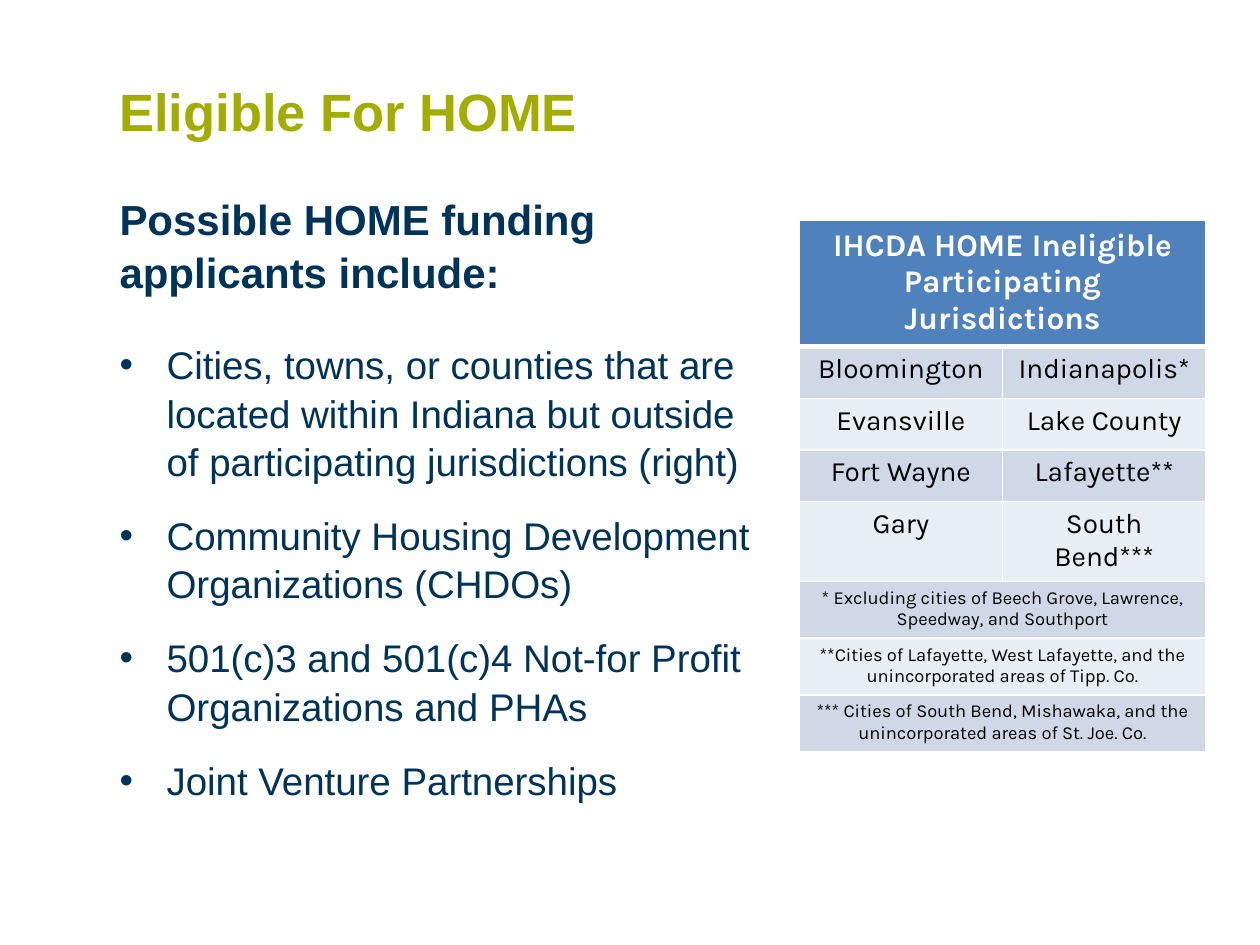
from lxml import etree
from pptx import Presentation
from pptx import util as u
from pptx.dml import color
from pptx.enum import text
from pptx.oxml import ns

NAVY, OLIVE, WHITE, BLACK = "003359", "A2AD00", "FFFFFF", "000000"
HEADER_BLUE, BANDS = "4F81BD", ("D0D8E8", "E9EDF4")

APPLICANTS = [
    "Cities, towns, or counties that are located within Indiana but outside "
    "of participating jurisdictions (right)",
    "Community Housing Development Organizations (CHDOs)",
    "501(c)3 and 501(c)4 Not-for Profit Organizations and PHAs",
    "Joint Venture Partnerships",
]
JURISDICTIONS = [
    ("Bloomington", "Indianapolis*"),
    ("Evansville", "Lake County"),
    ("Fort Wayne", "Lafayette**"),
    ("Gary", "South Bend***"),
]
EXCLUSIONS = [
    "* Excluding cities of Beech Grove, Lawrence, Speedway, and Southport",
    "**Cities of Lafayette, West Lafayette, and the unincorporated areas of Tipp. Co.",
    "*** Cities of South Bend, Mishawaka, and the unincorporated areas of St. Joe. Co.",
]


def rgb(value):
    """Turn a hex string into a colour."""
    return color.RGBColor.from_string(value)


def add_element(parent, tag, **attributes):
    """Append a DrawingML element to its parent."""
    return etree.SubElement(parent, ns.qn(tag), attributes)


def add_bullet(paragraph, tint):
    """Give a paragraph a hanging round bullet."""
    properties = paragraph._p.get_or_add_pPr()
    hang = u.Cm(0.95)
    properties.set("marL", str(hang))
    properties.set("indent", str(-hang))
    add_element(add_element(properties, "a:buClr"), "a:srgbClr", val=tint)
    add_element(properties, "a:buFont", typeface="Arial")
    add_element(properties, "a:buChar", char="•")


def write(frame, words, size, tint, font="Arial", bold=False, align=None,
          bullet=False, before=None, spacing=None):
    """Write one formatted paragraph, reusing the first one while it is empty."""
    first = frame.paragraphs[0]
    paragraph = frame.add_paragraph() if first.runs else first
    if bullet:
        add_bullet(paragraph, tint)
    paragraph.alignment = align
    paragraph.line_spacing = spacing
    if before is not None:
        paragraph.space_before = u.Pt(before)
    run = paragraph.add_run()
    run.text = words
    run.font.name, run.font.size, run.font.bold = font, u.Pt(size), bold
    run.font.color.rgb = rgb(tint)


def add_text_box(slide, left, top, width, height, anchor=text.MSO_ANCHOR.TOP):
    """Add a wrapping text box and return its text frame."""
    box = slide.shapes.add_textbox(u.Cm(left), u.Cm(top), u.Cm(width), u.Cm(height))
    box.text_frame.word_wrap = True
    box.text_frame.vertical_anchor = anchor
    return box.text_frame


def style_cell(cell, fill, bottom=1):
    """Give a cell white borders and a solid fill."""
    properties = cell._tc.get_or_add_tcPr()
    for side, points in (("L", 1), ("R", 1), ("T", 1), ("B", bottom)):
        border = add_element(properties, f"a:ln{side}", w=str(u.Pt(points)))
        add_element(add_element(border, "a:solidFill"), "a:srgbClr", val=WHITE)
    cell.fill.solid()
    cell.fill.fore_color.rgb = rgb(fill)


def add_jurisdiction_table(slide):
    """Add the table of ineligible jurisdictions with its footnote rows."""
    rows = [("IHCDA HOME Ineligible Participating Jurisdictions",)]
    rows += JURISDICTIONS + [(note,) for note in EXCLUSIONS]
    row_height = 1.04
    table = slide.shapes.add_table(
        len(rows), 2, u.Cm(16.11), u.Cm(4.45), u.Cm(8.2), u.Cm(row_height * len(rows))
    ).table
    for index, entries in enumerate(rows):
        header = index == 0
        fill = HEADER_BLUE if header else BANDS[(index - 1) % 2]
        size = 18 if header else 16 if len(entries) == 2 else 10.5
        for column in range(2):
            style_cell(table.cell(index, column), fill, bottom=3 if header else 1)
        if len(entries) == 1:
            table.cell(index, 0).merge(table.cell(index, 1))
        for column, entry in enumerate(entries):
            write(table.cell(index, column).text_frame, entry, size,
                  WHITE if header else BLACK, font="Karla", bold=header,
                  align=text.PP_ALIGN.CENTER)


def main():
    """Build the slide and save it."""
    deck = Presentation()
    deck.slide_width, deck.slide_height = u.Cm(25.4), u.Cm(19.05)
    slide = deck.slides.add_slide(deck.slide_layouts[6])

    title = add_text_box(slide, 2.16, 0.64, 23.24, 3.18, text.MSO_ANCHOR.MIDDLE)
    write(title, "Eligible For HOME", 30, OLIVE, bold=True)

    body = add_text_box(slide, 2.16, 3.73, 13.54, 12.57)
    write(body, "Possible HOME funding applicants include:", 24, NAVY,
          bold=True, spacing=1.05)
    for index, applicant in enumerate(APPLICANTS):
        write(body, applicant, 22, NAVY, bullet=True, spacing=1.05,
              before=14.5 if index else 24)

    add_jurisdiction_table(slide)
    deck.save("out.pptx")


if __name__ == "__main__":
    main()
